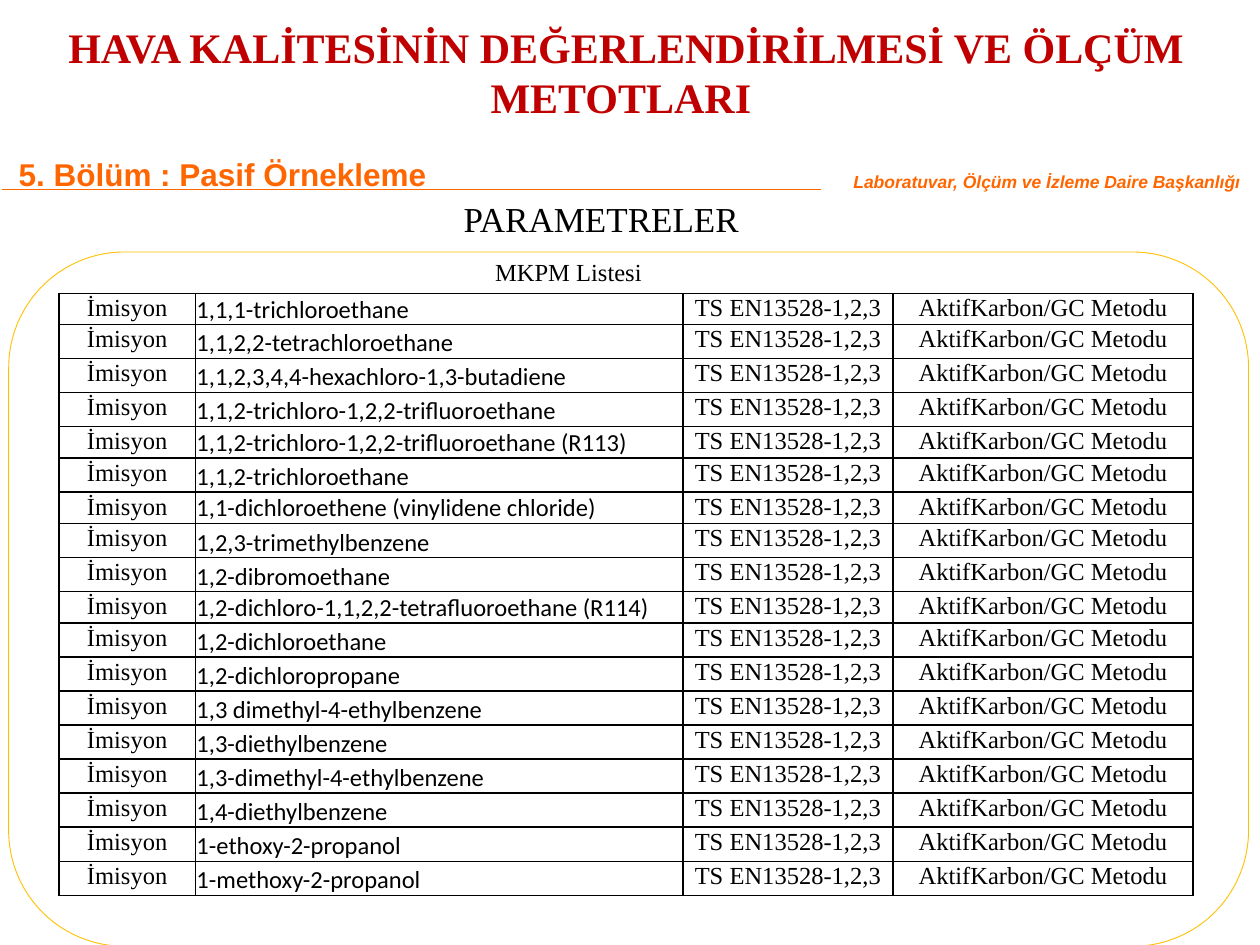
from lxml.etree import SubElement
from pptx import Presentation
from pptx.dml.color import RGBColor
from pptx.enum.shapes import MSO_CONNECTOR, MSO_SHAPE
from pptx.enum.text import MSO_ANCHOR, MSO_AUTO_SIZE, PP_ALIGN
from pptx.oxml.ns import qn
from pptx.util import Pt

TITLE = "HAVA KALİTESİNİN DEĞERLENDİRİLMESİ VE ÖLÇÜM METOTLARI "
SECTION = "5. Bölüm : Pasif Örnekleme"
DEPARTMENT = "Laboratuvar, Ölçüm ve İzleme Daire Başkanlığı"
HEADING = "PARAMETRELER"
LIST_NAME = "MKPM Listesi"
SAMPLE_TYPE = "İmisyon"
STANDARD = "TS EN13528-1,2,3"
METHOD = "AktifKarbon/GC Metodu"
COMPOUNDS = [
    "1,1,1-trichloroethane",
    "1,1,2,2-tetrachloroethane",
    "1,1,2,3,4,4-hexachloro-1,3-butadiene",
    "1,1,2-trichloro-1,2,2-trifluoroethane",
    "1,1,2-trichloro-1,2,2-trifluoroethane (R113)",
    "1,1,2-trichloroethane",
    "1,1-dichloroethene (vinylidene chloride)",
    "1,2,3-trimethylbenzene",
    "1,2-dibromoethane",
    "1,2-dichloro-1,1,2,2-tetrafluoroethane (R114)",
    "1,2-dichloroethane",
    "1,2-dichloropropane",
    "1,3 dimethyl-4-ethylbenzene",
    "1,3-diethylbenzene",
    "1,3-dimethyl-4-ethylbenzene",
    "1,4-diethylbenzene",
    "1-ethoxy-2-propanol",
    "1-methoxy-2-propanol",
]
COLUMN_WIDTHS = [77.8, 278.6, 120.2, 171.4]
FIRST_ROW, SHORT_ROW, ROW = 17.3, 18, 19.45
COLORS = {"white": "FFFFFF", "black": "000000", "orange": "FF6600",
          "gold": "FFC000", "red": "C00000"}
SERIF = "Times New Roman"


def color(name):
    return RGBColor.from_string(COLORS[name])


def write(frame, text, size=14, font=SERIF, ink="black", bold=False, italic=False,
          align=PP_ALIGN.LEFT, line_spacing=None):
    para = frame.paragraphs[0]
    para.alignment = align
    if line_spacing:
        para.line_spacing = line_spacing
    span = para.add_run()
    span.text = text
    span.font.size = Pt(size)
    span.font.name = font
    span.font.bold = bold
    span.font.italic = italic
    span.font.color.rgb = color(ink)


def add_shape(page, kind, place, line=None):
    shape = page.shapes.add_shape(kind, *map(Pt, place))
    shape.shadow.inherit = False
    shape.fill.solid()
    shape.fill.fore_color.rgb = color("white")
    if line:
        shape.line.color.rgb = color(line)
        shape.line.width = Pt(0.5)
    else:
        shape.line.fill.background()
    return shape


def add_text(page, text, place, wrap=False, **style):
    box = page.shapes.add_textbox(*map(Pt, place))
    box.text_frame.word_wrap = wrap
    write(box.text_frame, text, **style)


def add_borders(cell):
    properties = cell._tc.get_or_add_tcPr()
    for side in ("a:lnL", "a:lnR", "a:lnT", "a:lnB"):
        border = SubElement(properties, qn(side), w=str(Pt(1)))
        fill = SubElement(border, qn("a:solidFill"))
        SubElement(fill, qn("a:srgbClr"), val=COLORS["black"])


def fill_cell(cell, text, **style):
    add_borders(cell)
    cell.fill.solid()
    cell.fill.fore_color.rgb = color("white")
    cell.margin_left = cell.margin_right = cell.margin_top = Pt(0.72)
    cell.margin_bottom = Pt(0)
    write(cell.text_frame, text, **style)


def row_height(index, compound):
    if index == 0:
        return FIRST_ROW
    return SHORT_ROW if compound.endswith(")") else ROW


def add_compounds(page):
    heights = [row_height(i, name) for i, name in enumerate(COMPOUNDS)]
    table = page.shapes.add_table(
        len(COMPOUNDS), len(COLUMN_WIDTHS), Pt(33.8), Pt(167.8),
        Pt(sum(COLUMN_WIDTHS)), Pt(sum(heights))).table
    table.first_row = table.horz_banding = False
    for column, width in zip(table.columns, COLUMN_WIDTHS):
        column.width = Pt(width)
    for row, height, compound in zip(table.rows, heights, COMPOUNDS):
        row.height = Pt(height)
        kind, name, standard, method = row.cells
        for cell, text in ((kind, SAMPLE_TYPE), (standard, STANDARD), (method, METHOD)):
            fill_cell(cell, text, align=PP_ALIGN.CENTER)
        fill_cell(name, compound, font="Calibri")
        name.vertical_anchor = MSO_ANCHOR.BOTTOM


def main():
    deck = Presentation()
    deck.slide_width, deck.slide_height = Pt(720), Pt(540)
    page = deck.slides.add_slide(deck.slide_layouts[5])

    title = page.shapes.title
    title.left, title.top, title.width, title.height = map(Pt, (-2.2, 12.2, 720, 57.6))
    title.text_frame.word_wrap = True
    title.text_frame.auto_size = MSO_AUTO_SIZE.NONE
    title.text_frame.vertical_anchor = MSO_ANCHOR.MIDDLE
    write(title.text_frame, TITLE, size=24, ink="red", bold=True, align=PP_ALIGN.CENTER)

    add_shape(page, MSO_SHAPE.ROUNDED_RECTANGLE, (5, 144, 708.5, 396.7), line="gold")
    section = add_shape(page, MSO_SHAPE.RECTANGLE, (3.6, 85, 707.8, 39.6))
    section.text_frame.vertical_anchor = MSO_ANCHOR.TOP
    write(section.text_frame, SECTION, size=18, font="Arial", ink="orange", bold=True)
    add_text(page, DEPARTMENT, (469.4, 95.8, 246.2, 17.3), wrap=True, size=10,
             font="Arial", ink="orange", bold=True, italic=True,
             align=PP_ALIGN.RIGHT, line_spacing=0.85)

    rule = page.shapes.add_connector(
        MSO_CONNECTOR.STRAIGHT, Pt(1.4), Pt(108), Pt(469.4), Pt(108))
    rule.line.color.rgb = color("orange")
    rule.line.width = Pt(0.25)
    SubElement(rule._element.spPr, qn("a:effectLst"))

    add_text(page, HEADING, (257.8, 109.4, 173.5, 31.7), size=20)
    add_compounds(page)
    add_text(page, LIST_NAME, (275.8, 143.3, 99.4, 24.5))
    deck.save("out.pptx")


if __name__ == "__main__":
    main()
